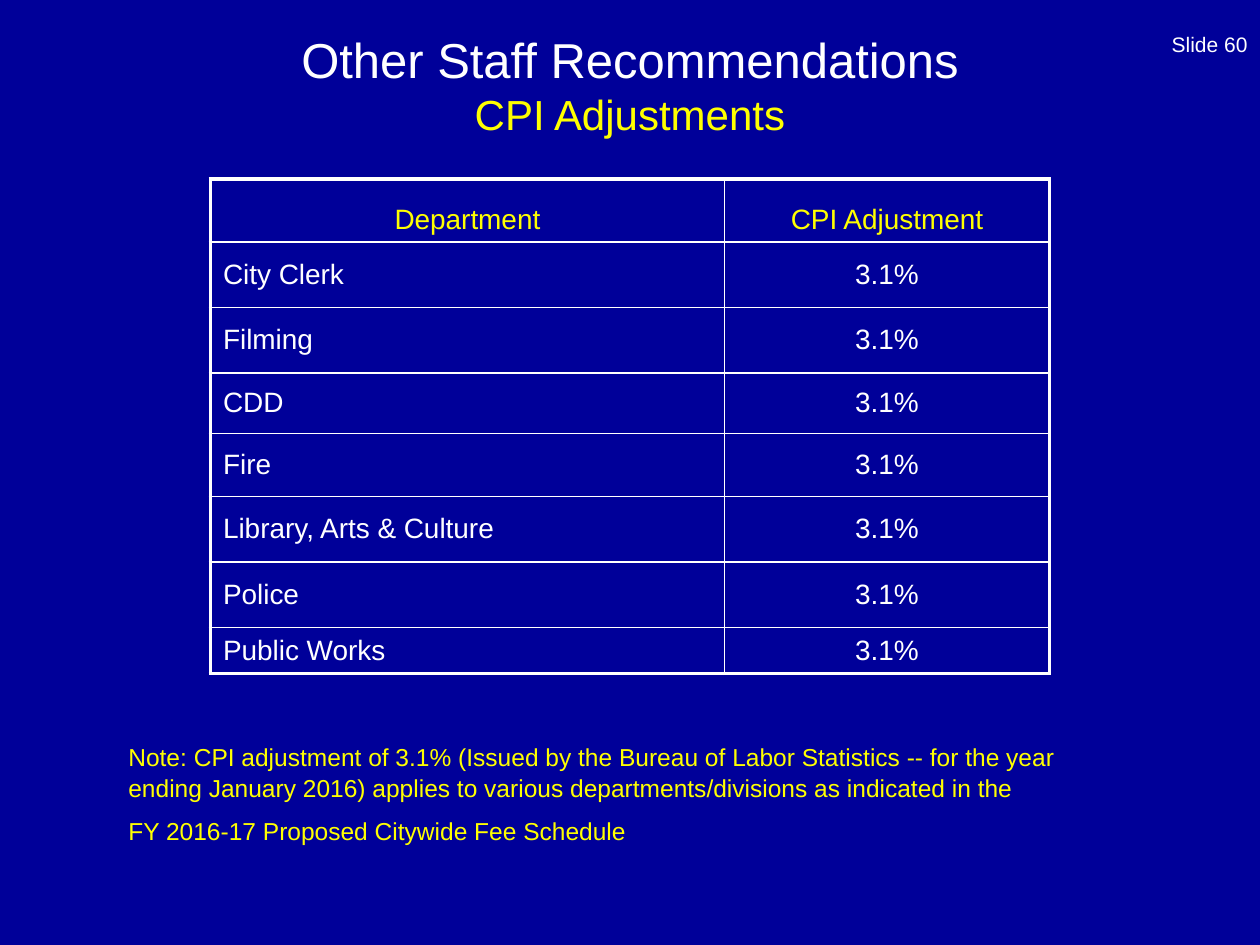
from lxml import etree
from pptx import Presentation
from pptx import util as u
from pptx.dml.color import RGBColor
from pptx.enum import text
from pptx.oxml import ns

NAVY = RGBColor(0x00, 0x00, 0x99)
WHITE = RGBColor(0xFF, 0xFF, 0xFF)
YELLOW = RGBColor(0xFF, 0xFF, 0x00)
LEFT, CENTER, RIGHT = text.PP_ALIGN.LEFT, text.PP_ALIGN.CENTER, text.PP_ALIGN.RIGHT
TOP, MIDDLE, BOTTOM = text.MSO_ANCHOR.TOP, text.MSO_ANCHOR.MIDDLE, text.MSO_ANCHOR.BOTTOM


def write(frame, lines, anchor, **paragraph_format):
    frame.word_wrap = True
    frame.vertical_anchor = anchor
    for index, (words, size, color) in enumerate(lines):
        para = frame.paragraphs[0] if index == 0 else frame.add_paragraph()
        for name, value in paragraph_format.items():
            if name != "space_before" or index:
                setattr(para, name, value)
        span = para.add_run()
        span.text = words
        for name, value in {"name": "Arial", "size": u.Pt(size)}.items():
            setattr(span.font, name, value)
        span.font.color.rgb = color


def add_borders(cell, widths):
    properties = cell._tc.get_or_add_tcPr()
    for index, (side, width) in enumerate(widths.items()):
        line = etree.Element(ns.qn("a:ln" + side), w=str(u.Pt(width)))
        fill = etree.SubElement(line, ns.qn("a:solidFill"))
        etree.SubElement(fill, ns.qn("a:srgbClr"), val=str(WHITE))
        properties.insert(index, line)


deck = Presentation()
deck.slide_width, deck.slide_height = u.Inches(10), u.Inches(7.5)
page = deck.slides.add_slide(deck.slide_layouts[5])
page.background.fill.solid()
page.background.fill.fore_color.rgb = NAVY

number_box = page.shapes.add_textbox(u.Inches(7.67), 0, u.Inches(2.33), u.Inches(0.5))
write(number_box.text_frame, [("Slide 60", 12, WHITE)], BOTTOM, alignment=RIGHT)

title = page.shapes.title
title_place = {"left": 0.5, "top": 0.17, "width": 9, "height": 1}
for name, value in title_place.items():
    setattr(title, name, u.Inches(value))
title.text_frame.auto_size = text.MSO_AUTO_SIZE.NONE
title_lines = [("Other Staff Recommendations", 28, WHITE), ("CPI Adjustments", 24, YELLOW)]
write(title.text_frame, title_lines, MIDDLE, alignment=CENTER)

departments = ["City Clerk", "Filming", "CDD", "Fire", "Library, Arts & Culture",
               "Police", "Public Works"]
rows = [("Department", "CPI Adjustment")] + [(name, "3.1%") for name in departments]
row_heights = [0.5, 0.52, 0.52, 0.48, 0.5, 0.52, 0.52, 0.34]
column_widths = [4.08, 2.58]
table = page.shapes.add_table(len(rows), 2, u.Inches(1.67), u.Inches(1.42),
                              u.Inches(sum(column_widths)), u.Inches(sum(row_heights))).table
for column, width in zip(table.columns, column_widths):
    column.width = u.Inches(width)
for r, (row, height) in enumerate(zip(rows, row_heights)):
    table.rows[r].height = u.Inches(height)
    for c, words in enumerate(row):
        cell = table.cell(r, c)
        cell.fill.background()
        cell.vertical_anchor = MIDDLE if r else BOTTOM
        write(cell.text_frame, [(words, 16, WHITE if r else YELLOW)], cell.vertical_anchor,
              alignment=LEFT if r and c == 0 else CENTER)
        outer_sides = {"L": c == 0, "R": c == 1, "T": r == 0, "B": r == len(rows) - 1}
        add_borders(cell, {side: 2.25 if outer else 1 for side, outer in outer_sides.items()})

note_box = page.shapes.add_textbox(u.Inches(0.92), u.Inches(5.83), u.Inches(8.08), u.Inches(0.93))
note_lines = [
    ("Note: CPI adjustment of 3.1% (Issued by the Bureau of Labor Statistics -- for the year "
     "ending January 2016) applies to various departments/divisions as indicated in the",
     14, YELLOW),
    ("FY 2016-17 Proposed Citywide Fee Schedule", 14, YELLOW),
]
write(note_box.text_frame, note_lines, TOP, alignment=LEFT, line_spacing=1.05,
      space_before=u.Pt(7))

deck.save("out.pptx")
